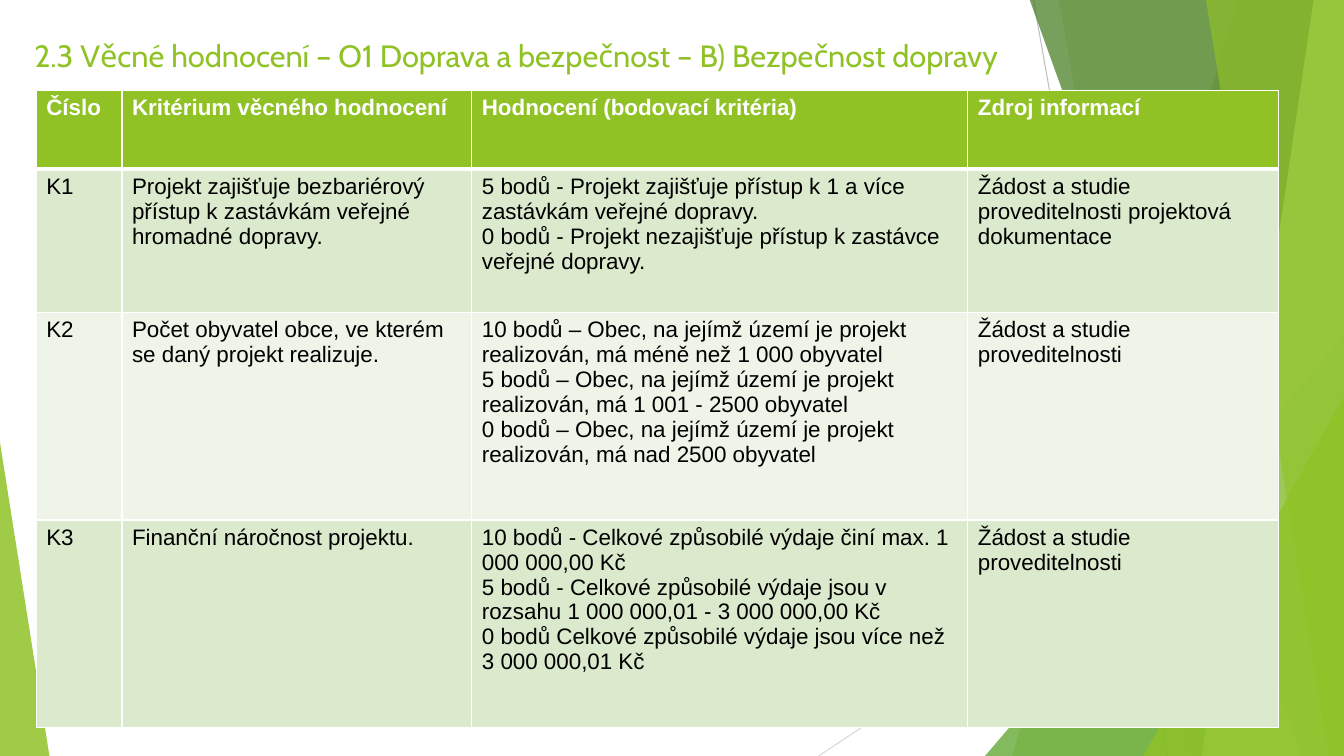
from dataclasses import dataclass

from lxml.etree import SubElement
from pptx import Presentation
from pptx.dml.color import RGBColor
from pptx.enum.shapes import MSO_CONNECTOR, MSO_SHAPE
from pptx.enum.text import MSO_ANCHOR, PP_ALIGN
from pptx.oxml.ns import qn
from pptx.util import Inches, Pt

COLORS = {
    "green": "90C226", "leaf": "54A021", "forest": "3F7819", "lime": "C0E474",
    "white": "FFFFFF", "black": "000000", "gray": "BFBFBF", "light_gray": "D9D9D9",
    "band_dark": "DBE9CD", "band_light": "EEF4E8",
}
WIDTH, HEIGHT = 13.33, 7.5


@dataclass
class Line:
    start: tuple[float, float]
    end: tuple[float, float]
    color: str


@dataclass
class Band:
    """Strip along the right edge, slanted from top_x to bottom_x."""
    top_x: float
    bottom_x: float
    color: str
    alpha: int


@dataclass
class Triangle:
    left: float
    top: float
    width: float
    apex: float
    color: str
    alpha: int


DECORATION = [
    Line((10.25, 0), (11.58, HEIGHT), "gray"),
    Line((WIDTH, 4.03), (8.12, HEIGHT), "light_gray"),
    Band(12.28, 10.04, "green", 30),
    Band(10.5, 11.83, "green", 20),
    Triangle(9.77, 3.33, 3.56, 1, "leaf", 72),
    Band(10.21, 12.91, "forest", 70),
    Band(13.03, 11.92, "lime", 70),
    Band(11.96, 13.18, "green", 65),
    Triangle(11.34, 3.93, 1.99, 1, "green", 80),
    Triangle(0, 4.39, 0.49, 0, "green", 85),
]

TITLE = "2.3 Věcné hodnocení – O1 Doprava a bezpečnost – B) Bezpečnost dopravy"
COL_WIDTHS = [0.85, 3.47, 4.92, 3.08]
ROW_HEIGHTS = [0.78, 1.42, 2.06, 2.06]
ROWS = [
    ["Číslo", "Kritérium věcného hodnocení", "Hodnocení (bodovací kritéria)", "Zdroj informací"],
    ["K1",
     "Projekt zajišťuje bezbariérový přístup k zastávkám veřejné hromadné dopravy.",
     "5 bodů - Projekt zajišťuje přístup k 1 a více zastávkám veřejné dopravy.\n"
     "0 bodů - Projekt nezajišťuje přístup k zastávce veřejné dopravy.",
     "Žádost a studie proveditelnosti projektová dokumentace"],
    ["K2",
     "Počet obyvatel obce, ve kterém se daný projekt realizuje.",
     "10 bodů – Obec, na jejímž území je projekt realizován, má méně než 1 000 obyvatel\n"
     "5 bodů – Obec, na jejímž území je projekt realizován, má 1 001 - 2500 obyvatel\n"
     "0 bodů – Obec, na jejímž území je projekt realizován, má nad 2500 obyvatel",
     "Žádost a studie proveditelnosti"],
    ["K3",
     "Finanční náročnost projektu.",
     "10 bodů - Celkové způsobilé výdaje činí max. 1 000 000,00 Kč\n"
     "5 bodů - Celkové způsobilé výdaje jsou v rozsahu 1 000 000,01 - 3 000 000,00 Kč\n"
     "0 bodů Celkové způsobilé výdaje jsou více než 3 000 000,01 Kč",
     "Žádost a studie proveditelnosti"],
]


def rgb(name: str) -> RGBColor:
    return RGBColor.from_string(COLORS[name])


def set_text(tf, text: str, *, size: float, font: str, color: str, bold: bool = False) -> None:
    """Write one paragraph per line of text."""
    tf.word_wrap = True
    for i, line in enumerate(text.split("\n")):
        p = tf.paragraphs[0] if i == 0 else tf.add_paragraph()
        p.alignment = PP_ALIGN.LEFT
        r = p.add_run()
        r.text = line
        r.font.size, r.font.name, r.font.bold = Pt(size), font, bold
        r.font.color.rgb = rgb(color)


def paint(sp, color: str, alpha: int) -> None:
    sp.shadow.inherit = False
    sp.line.fill.background()
    sp.fill.solid()
    sp.fill.fore_color.rgb = rgb(color)
    clr = sp.fill._xPr.find(qn("a:solidFill"))[0]
    SubElement(clr, qn("a:alpha"), val=str(alpha * 1000))


def draw_line(s, line: Line) -> None:
    cxn = s.shapes.add_connector(MSO_CONNECTOR.STRAIGHT, *map(Inches, line.start + line.end))
    cxn.line.color.rgb = rgb(line.color)
    cxn.line.width = Pt(0.75)
    SubElement(cxn._element.spPr, qn("a:effectLst"))


def draw_band(s, band: Band) -> None:
    points = [(band.top_x, -0.01), (WIDTH, -0.01), (WIDTH, HEIGHT), (band.bottom_x, HEIGHT)]
    first, *rest = [(Inches(x), Inches(y)) for x, y in points]
    builder = s.shapes.build_freeform(*first)
    builder.add_line_segments(rest, close=True)
    paint(builder.convert_to_shape(), band.color, band.alpha)


def draw_triangle(s, tri: Triangle) -> None:
    sp = s.shapes.add_shape(MSO_SHAPE.ISOSCELES_TRIANGLE, Inches(tri.left), Inches(tri.top),
                            Inches(tri.width), Inches(HEIGHT - tri.top))
    sp.adjustments[0] = tri.apex
    paint(sp, tri.color, tri.alpha)


def set_borders(cell, top: float, bottom: float) -> None:
    tc_pr = cell._tc.get_or_add_tcPr()
    for i, (side, width) in enumerate({"L": 1, "R": 1, "T": top, "B": bottom}.items()):
        ln = SubElement(tc_pr, qn(f"a:ln{side}"), w=str(Pt(width)))
        fill = SubElement(ln, qn("a:solidFill"))
        SubElement(fill, qn("a:srgbClr"), val=COLORS["white"])
        tc_pr.insert(i, ln)


def draw_table(s) -> None:
    table = s.shapes.add_table(len(ROWS), len(COL_WIDTHS), Inches(0.36), Inches(0.9),
                               Inches(sum(COL_WIDTHS)), Inches(sum(ROW_HEIGHTS))).table
    for col, width in zip(table.columns, COL_WIDTHS):
        col.width = Inches(width)
    for i, (row, height) in enumerate(zip(table.rows, ROW_HEIGHTS)):
        row.height = Inches(height)
        header = i == 0
        fill = "green" if header else "band_dark" if i % 2 else "band_light"
        for cell, text in zip(row.cells, ROWS[i]):
            cell.fill.solid()
            cell.fill.fore_color.rgb = rgb(fill)
            set_borders(cell, top=3 if i == 1 else 1, bottom=3 if header else 1)
            set_text(cell.text_frame, text, size=16, font="Arial",
                     color="white" if header else "black", bold=header)


def main() -> None:
    prs = Presentation()
    prs.slide_width, prs.slide_height = Inches(WIDTH), Inches(HEIGHT)
    s = prs.slides.add_slide(prs.slide_layouts[5])

    # Green facets at the slide edges
    draw = {Line: draw_line, Band: draw_band, Triangle: draw_triangle}
    for part in DECORATION:
        draw[type(part)](s, part)

    # Title
    title = s.shapes.title
    title.left, title.top, title.width, title.height = map(Inches, (0.24, 0.31, 10.25, 0.59))
    title.text_frame.vertical_anchor = MSO_ANCHOR.TOP
    set_text(title.text_frame, TITLE, size=22, font="Cabin", color="green")

    # Scoring criteria
    draw_table(s)
    prs.save("out.pptx")


if __name__ == "__main__":
    main()
